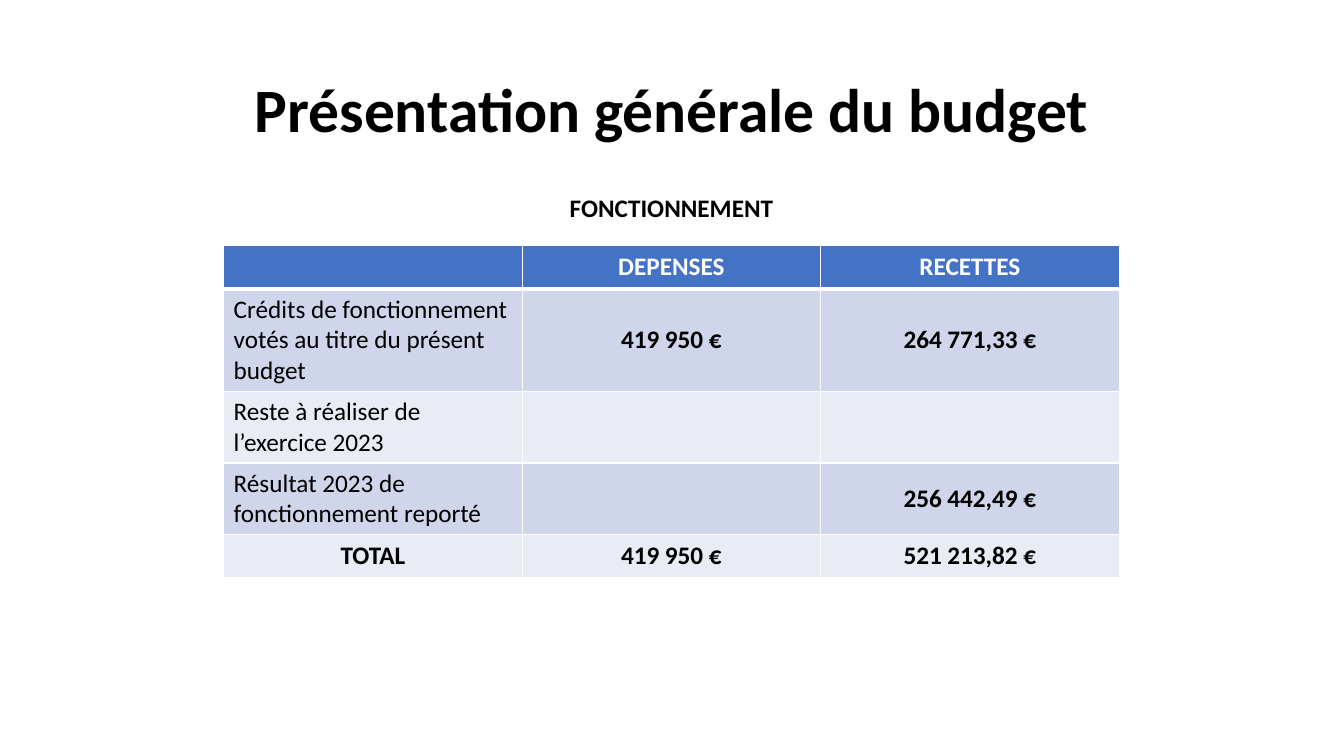
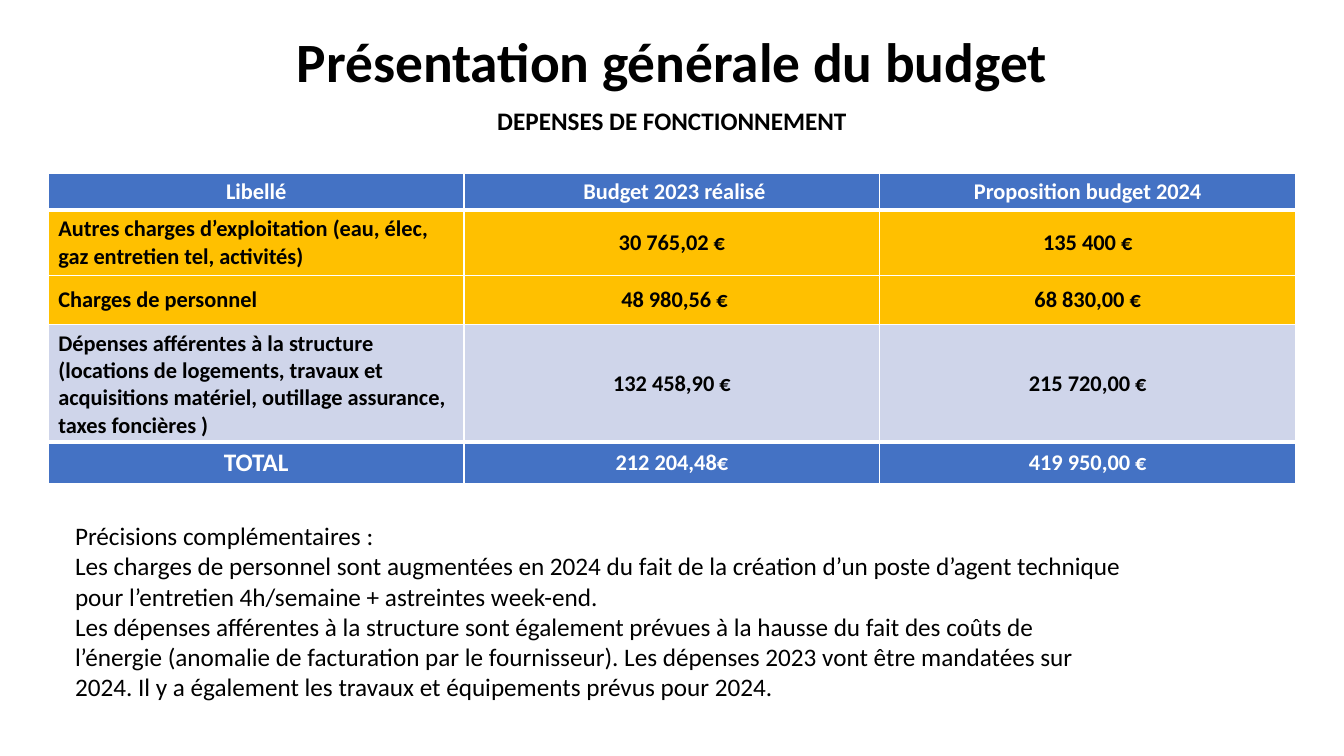
from lxml.etree import SubElement as Sub
from pptx import Presentation as Deck
from pptx.dml.color import RGBColor as Rgb
from pptx.enum.text import MSO_ANCHOR as Anchor, PP_ALIGN as Align
from pptx.oxml.ns import qn
from pptx.util import Emu, Pt

PX = 9525
FONT = "Calibri"
TITLE = "Présentation générale du budget"
HEX = {
    "black": "000000",
    "white": "FFFFFF",
    "blue": "4472C4",
    "mist": "CFD5EA",
    "pale": "E9EBF5",
    "gold": "FFC000",
}


def px(*nums):
    """Turn px lengths into EMU."""
    return [Emu(num * PX) for num in nums]


def style(para, size, ink="black", bold=True, align=Align.CENTER):
    """Format a paragraph and its runs."""
    para.alignment = align
    for run in para.runs:
        font = run.font
        font.name, font.size, font.bold = FONT, Pt(size), bold
        font.color.rgb = Rgb.from_string(HEX[ink])


def text(slide, box, words, size, **look):
    """Add a wrapped text box and return its frame."""
    frame = slide.shapes.add_textbox(*px(*box)).text_frame
    frame.word_wrap = True
    frame.text = words
    for para in frame.paragraphs:
        style(para, size, **look)
    return frame


def title(slide, box, size):
    """Place the shared slide title in its box."""
    frame = text(slide, box, TITLE, size)
    frame.vertical_anchor = Anchor.MIDDLE
    frame.paragraphs[0].line_spacing = 0.9


def edge(cell, side, width):
    """Draw one white border of a cell."""
    line = Sub(cell._tc.get_or_add_tcPr(), qn(f"a:ln{side}"), w=str(Pt(width)))
    fill = Sub(line, qn("a:solidFill"))
    Sub(fill, qn("a:srgbClr"), val=HEX["white"])


def paint(cell, fill, top, base):
    """Set the borders, fill and anchor of a cell."""
    for side, width in (("L", 1), ("R", 1), ("T", top), ("B", base)):
        edge(cell, side, width)
    cell.fill.solid()
    cell.fill.fore_color.rgb = Rgb.from_string(HEX[fill])
    cell.vertical_anchor = Anchor.MIDDLE


def grid(slide, box, rows, size, bold):
    """Build a budget table from rows of height, fill and words."""
    last = len(rows) - 1
    table = slide.shapes.add_table(len(rows), 3, *px(*box)).table
    table.first_row = table.horz_banding = False
    for col in table.columns:
        col.width = Emu(box[2] * PX // 3)
    fills = [fill for _, fill, _ in rows]
    heavy = {1} | ({last} if fills[last] == "blue" else set())
    for r, (high, fill, words) in enumerate(rows):
        table.rows[r].height = Emu(high * PX)
        ink = "white" if fill == "blue" else "black"
        for c, word in enumerate(words):
            cell = table.cell(r, c)
            paint(cell, fill, 3 if r in heavy else 1, 3 if r + 1 in heavy else 1)
            cell.text = word
            label = c == 0 and 0 < r < last
            style(
                cell.text_frame.paragraphs[0],
                18 if word == "TOTAL" else size,
                ink,
                bold or not label,
                Align.LEFT if label else Align.CENTER,
            )


def general(slide):
    """Build the overview of the operating budget."""
    title(slide, (88, 38, 1104, 139), 44)
    text(slide, (213, 178, 853, 38), "FONCTIONNEMENT", 18)
    rows = [
        (41, "blue", ("", "DEPENSES", "RECETTES")),
        (98, "mist", ("Crédits de fonctionnement votés au titre du présent budget",
                      "419 950 €", "264 771,33 €")),
        (68, "pale", ("Reste à réaliser de l’exercice 2023", "", "")),
        (68, "mist", ("Résultat 2023 de fonctionnement reporté", "", "256 442,49 €")),
        (41, "pale", ("TOTAL", "419 950 €", "521 213,82 €")),
    ]
    grid(slide, (213, 234, 853, 316), rows, 18, False)


def costs(slide):
    """Build the detail of the operating costs."""
    title(slide, (88, 38, 1104, 46), 39.6)
    rows = [
        (34, "blue", ("Libellé", " Budget 2023 réalisé", "Proposition budget 2024")),
        (62, "gold", ("Autres charges d’exploitation (eau, élec, gaz entretien tel, activités)",
                      "30 765,02 €", "135 400 €")),
        (47, "gold", ("Charges de personnel", " 48 980,56 €", "68 830,00 €")),
        (112, "mist", ("Dépenses afférentes à la structure (locations de logements, travaux et "
                       "acquisitions matériel, outillage assurance, taxes foncières )",
                       "132 458,90 €", "215 720,00 €")),
        (39, "blue", ("TOTAL", "212 204,48€", "419 950,00 €")),
    ]
    grid(slide, (46, 165, 1188, 294), rows, 16, True)
    text(slide, (283, 96, 714, 38), "DEPENSES DE FONCTIONNEMENT", 18)
    notes = (
        "Précisions complémentaires :",
        "Les charges de personnel sont augmentées en 2024 du fait de la création d’un poste "
        "d’agent technique pour l’entretien 4h/semaine + astreintes week-end.",
        "Les dépenses afférentes à la structure sont également prévues à la hausse du fait des "
        "coûts de l’énergie (anomalie de facturation par le fournisseur). Les dépenses 2023 vont "
        "être mandatées sur 2024. Il y a également les travaux et équipements prévus pour 2024.",
    )
    text(slide, (62, 491, 1015, 184), "\n".join(notes), 18, bold=False, align=Align.LEFT)


def main():
    """Build and save the deck."""
    deck = Deck()
    deck.slide_width, deck.slide_height = px(1280, 720)
    for build in (general, costs):
        build(deck.slides.add_slide(deck.slide_layouts[6]))
    deck.save("out.pptx")


if __name__ == "__main__":
    main()
